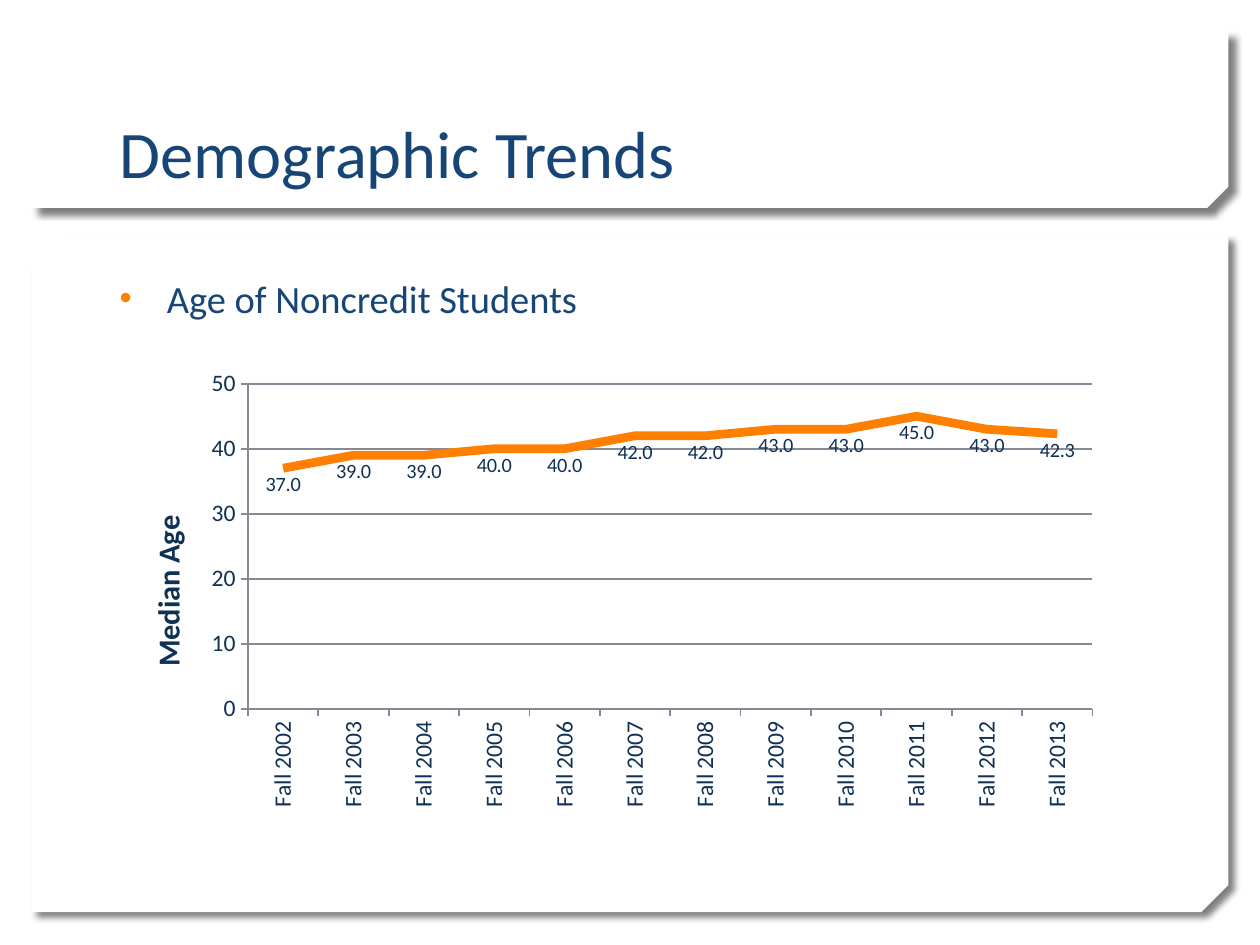
from dataclasses import dataclass

from pptx import Presentation
from pptx.chart.data import CategoryChartData
from pptx.dml.color import RGBColor
from pptx.enum.chart import XL_CHART_TYPE, XL_LABEL_POSITION, XL_MARKER_STYLE, XL_TICK_MARK
from pptx.enum.shapes import MSO_SHAPE
from pptx.enum.text import MSO_ANCHOR, MSO_AUTO_SIZE, PP_ALIGN
from pptx.oxml import parse_xml
from pptx.oxml.ns import nsdecls, qn
from pptx.util import Pt

LINE_CHART = XL_CHART_TYPE.LINE
BELOW = XL_LABEL_POSITION.BELOW
NO_MARKER = XL_MARKER_STYLE.NONE
TICK_OUTSIDE = XL_TICK_MARK.OUTSIDE
SNIPPED = MSO_SHAPE.SNIP_2_DIAG_RECTANGLE
TOP, BOTTOM = MSO_ANCHOR.TOP, MSO_ANCHOR.BOTTOM
LEFT = PP_ALIGN.LEFT
NO_AUTOFIT = MSO_AUTO_SIZE.NONE

FONT = "Calibri"
WHITE, BLUE, NAVY, ORANGE, GRAY = "FFFFFF", "174576", "103154", "FF7F01", "868A94"
MEDIAN_AGES = (37, 39, 39, 40, 40, 42, 42, 43, 43, 45, 43, 42.3)
FIRST_YEAR = 2002


@dataclass(frozen=True)
class Box:
    left: float
    top: float
    width: float
    height: float

    def lengths(self) -> tuple:
        return tuple(Pt(value) for value in (self.left, self.top, self.width, self.height))


@dataclass(frozen=True)
class Panel:
    box: Box
    snip: float


PANELS = (
    Panel(Box(18, 134.6, 684, 386.6), 0.04),
    Panel(Box(18, 18, 684, 100.8), 0.12),
)
TITLE_BOX = Box(61.2, 23, 596.9, 90)
BODY_BOX = Box(61.2, 153.4, 596.9, 315.4)
CHART_BOX = Box(42.5, 205.2, 640.1, 288)


def color(value: str) -> RGBColor:
    return RGBColor.from_string(value)


def apply_format(target, values: dict) -> None:
    for name, value in values.items():
        setattr(target, name, value)


def format_font(font, size: float, shade: str, bold: bool = False) -> None:
    apply_format(font, {"name": FONT, "size": Pt(size), "bold": bold})
    font.color.rgb = color(shade)


def format_line(line, width: float, shade: str) -> None:
    line.width = Pt(width)
    line.color.rgb = color(shade)


def add_panel(slide, panel: Panel) -> None:
    """Draw a white card with a soft shadow behind the placeholders."""
    shape = slide.shapes.add_shape(SNIPPED, *panel.box.lengths())
    shape.adjustments[0], shape.adjustments[1] = panel.snip, 0
    shape.fill.solid()
    shape.fill.fore_color.rgb = color(WHITE)
    shape.line.fill.background()
    shape.shadow.inherit = False
    effects = shape.element.spPr.find(qn("a:effectLst"))
    effects.append(parse_xml(
        f'<a:outerShdw {nsdecls("a")} blurRad="{Pt(4)}" dist="{Pt(5)}" '
        'dir="2700000" algn="tl" rotWithShape="0"><a:srgbClr val="000000">'
        '<a:alpha val="50000"/></a:srgbClr></a:outerShdw>'))


def fill_placeholder(shape, box: Box, text: str, size: float, anchor):
    left, top, width, height = box.lengths()
    apply_format(shape, {"left": left, "top": top, "width": width, "height": height})
    frame = shape.text_frame
    frame.text = text
    apply_format(frame, {"word_wrap": True, "auto_size": NO_AUTOFIT, "vertical_anchor": anchor})
    para = frame.paragraphs[0]
    para.alignment = LEFT
    format_font(para.runs[0].font, size, BLUE)
    return para


def add_bullet(para) -> None:
    para.space_before = Pt(20)
    properties = para._p.get_or_add_pPr()
    properties.set("marL", str(Pt(27)))
    properties.set("indent", str(Pt(-27)))
    for tag in (f'<a:buClr {nsdecls("a")}><a:srgbClr val="{ORANGE}"/></a:buClr>',
                f'<a:buSzPct {nsdecls("a")} val="90000"/>',
                f'<a:buFont {nsdecls("a")} typeface="Arial"/>',
                f'<a:buChar {nsdecls("a")} char="•"/>'):
        properties.append(parse_xml(tag))


def set_layout(element, index: int, values: dict) -> None:
    """Place a chart part by fractions of the chart area."""
    for old in element.findall(qn("c:layout")):
        element.remove(old)
    parts = "".join(f'<c:{name} val="{value}"/>' for name, value in values.items())
    element.insert(index, parse_xml(
        f'<c:layout {nsdecls("c")}><c:manualLayout>{parts}</c:manualLayout></c:layout>'))


def format_axis(axis) -> None:
    axis.major_tick_mark = TICK_OUTSIDE
    format_font(axis.tick_labels.font, 13.5, NAVY)
    format_line(axis.format.line, 1, GRAY)


def add_age_chart(slide) -> None:
    data = CategoryChartData(number_format="#,##0.0")
    data.categories = [f"Fall {FIRST_YEAR + step}" for step in range(len(MEDIAN_AGES))]
    data.add_series("Series 1", MEDIAN_AGES)
    chart = slide.shapes.add_chart(LINE_CHART, *CHART_BOX.lengths(), data).chart
    apply_format(chart, {"has_legend": False, "has_title": False})
    format_font(chart.font, 17.4, NAVY)

    categories, ages = chart.category_axis, chart.value_axis
    for axis in (categories, ages):
        format_axis(axis)
    categories.has_major_gridlines = False
    categories.tick_labels.font  # the text body exists once the font is set
    text_body = categories._element.find(qn("c:txPr")).find(qn("a:bodyPr"))
    apply_rotation = {"rot": "-5400000", "vert": "horz"}
    for name, value in apply_rotation.items():
        text_body.set(name, value)

    apply_format(ages, {"minimum_scale": 0, "maximum_scale": 50, "major_unit": 10,
                        "has_major_gridlines": True, "has_title": True})
    apply_format(ages.tick_labels, {"number_format": "#,##0", "number_format_is_linked": False})
    format_line(ages.major_gridlines.format.line, 1, GRAY)
    title = ages.axis_title
    title.text_frame.text = "Median Age"
    format_font(title.text_frame.paragraphs[0].runs[0].font, 17.4, NAVY, bold=True)
    title_body = title.text_frame._txBody.find(qn("a:bodyPr"))
    for name, value in apply_rotation.items():
        title_body.set(name, value)
    set_layout(title._element, 1, {"xMode": "edge", "yMode": "edge", "x": 0.06, "y": 0.3})

    plot = chart.plots[0]
    plot.vary_by_categories = False
    series = plot.series[0]
    series.smooth = False
    series.marker.style = NO_MARKER
    format_line(series.format.line, 5, ORANGE)
    labels = series.data_labels
    apply_format(labels, {"show_value": True, "position": BELOW,
                          "number_format": "#,##0.0", "number_format_is_linked": False})
    format_font(labels.font, 11.6, NAVY)
    plot_area = chart._chartSpace.chart.plotArea
    set_layout(plot_area, 0, {"layoutTarget": "inner", "xMode": "edge", "yMode": "edge",
                              "x": 0.155, "y": 0.049, "w": 0.754, "h": 0.645})


def main() -> None:
    deck = Presentation()
    deck.slide_width, deck.slide_height = Pt(720), Pt(540)
    page = deck.slides.add_slide(deck.slide_layouts[1])
    page.background.fill.solid()
    page.background.fill.fore_color.rgb = color(WHITE)
    title, body = page.placeholders
    for panel in PANELS:
        add_panel(page, panel)
    for shape in (title, body):
        page.shapes._spTree.append(shape.element)
    fill_placeholder(title, TITLE_BOX, "Demographic Trends", 38, BOTTOM)
    add_bullet(fill_placeholder(body, BODY_BOX, "Age of Noncredit Students", 22, TOP))
    add_age_chart(page)
    deck.save("out.pptx")


if __name__ == "__main__":
    main()
